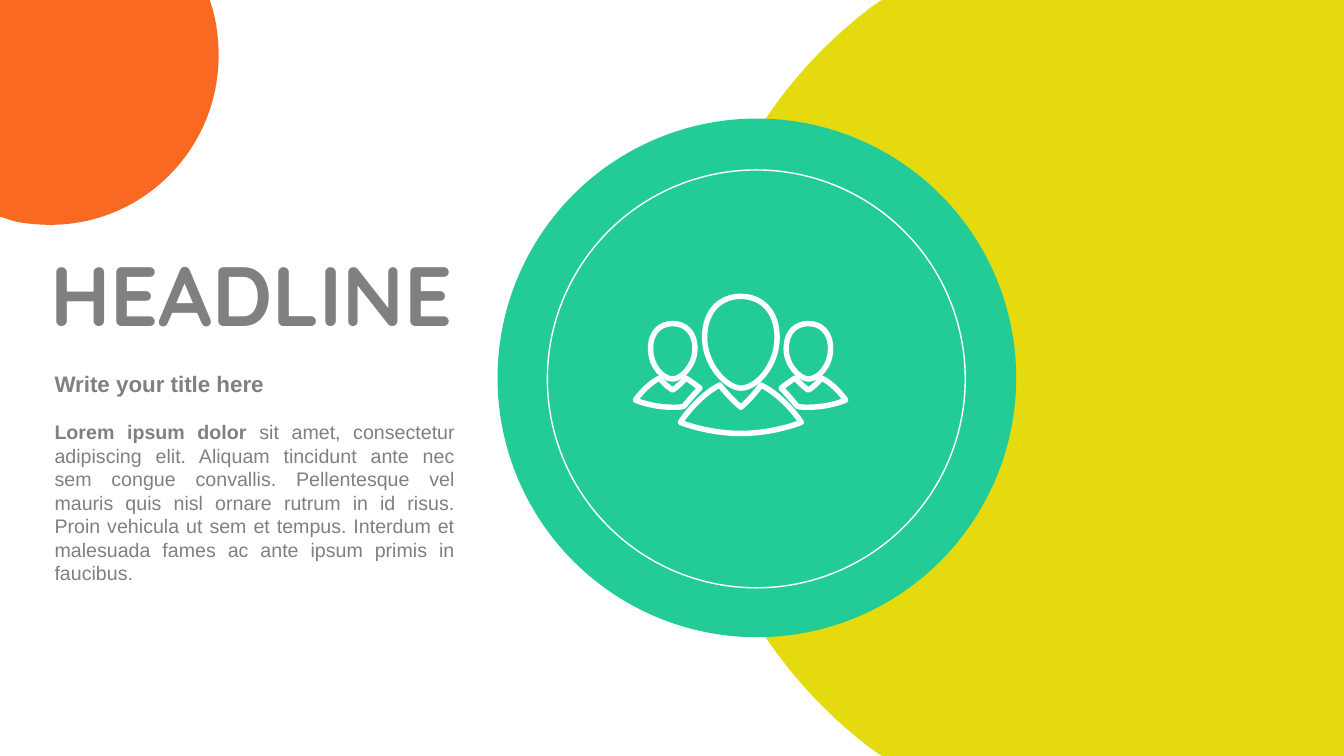
from lxml import etree
from pptx import Presentation
from pptx.dml.color import RGBColor
from pptx.enum.shapes import MSO_SHAPE as SHAPE
from pptx.enum.text import MSO_ANCHOR as ANCHOR, MSO_AUTO_SIZE as AUTO_SIZE, PP_ALIGN as ALIGN
from pptx.oxml.ns import qn
from pptx.util import Pt

COLORS = {"yellow": "E5DA0E", "green": "23CB97", "orange": "FA6921",
          "white": "FFFFFF", "gray": "808080"}
ICON_AXIS = 529  # the side figures mirror each other about this x

# Outlines in points: a pair is a straight step, six numbers are a Bézier step
YELLOW_DISC = [(961.2, 540), (630, 540), (623.5, 535.7),
               (542.9, 475.2, 490.3, 378.7, 490.3, 270),
               (490.3, 161.3, 542.9, 64.8, 623.5, 4.3), (630, 0), (961.2, 0)]
ORANGE_DISC = [(0, 154.8), (0, -12.2), (144.7, -12.2), (146.9, -7.2),
               (153.4, 7.2, 156.2, 23, 156.2, 39.6),
               (156.2, 106.6, 102.2, 160.6, 36, 160.6),
               (27.4, 160.6, 19.4, 159.8, 11.5, 158.4)]
MAIN_FIGURE = [
    [(555.1, 241.2), (555.1, 260.6, 540.7, 277.2, 529.2, 277.2),
     (519.1, 277.2, 503.3, 260.6, 503.3, 241.2),
     (503.3, 221.8, 514.8, 211.7, 529.2, 211.7),
     (543.6, 211.7, 555.1, 221.8, 555.1, 241.2)],
    [(543.6, 275), (537.1, 284.4, 529.2, 290.9, 529.2, 290.9),
     (529.2, 290.9, 521.3, 284.4, 514.1, 275),
     (497.5, 283.7, 486, 301.7, 486, 301.7),
     (486, 301.7, 505.4, 309.6, 529.2, 309.6),
     (553, 309.6, 572.4, 301.7, 572.4, 301.7),
     (572.4, 301.7, 560.9, 283.7, 543.6, 275)],
]
SIDE_FIGURE = [
    [(593.3, 249.1), (593.3, 261.4, 584.6, 270.7, 577.4, 270.7),
     (571.7, 270.7, 561.6, 261.4, 561.6, 249.1),
     (561.6, 236.9, 568.8, 231.1, 577.4, 231.1),
     (586.1, 231.1, 593.3, 236.9, 593.3, 249.1)],
    [(558, 277.2), (560.9, 275, 564.5, 272.2, 568.1, 270),
     (573.1, 275.8, 577.4, 278.6, 577.4, 278.6),
     (577.4, 278.6, 582.5, 275.8, 586.8, 270),
     (596.9, 275, 604.1, 285.8, 604.1, 285.8),
     (604.1, 285.8, 592.6, 290.9, 577.4, 290.9),
     (574.6, 290.9, 571.7, 290.9, 569.5, 290.2),
     (569.5, 290.2, 563, 282.2, 558, 277.2)],
]


def paint(shape, fill=None, line=None, width=1):
    shape.shadow.inherit = False
    for part, color in ((shape.fill, fill), (shape.line.fill, line)):
        if color:
            part.solid()
            part.fore_color.rgb = RGBColor.from_string(COLORS[color])
        else:
            part.background()
    if line:
        shape.line.width = Pt(width)


def add_outline(shapes, steps, mirrored=False):
    points = [step[i:i + 2] for step in steps for i in range(0, len(step), 2)]
    if mirrored:
        points = [(2 * ICON_AXIS - x, y) for x, y in points]
    points = [(Pt(x), Pt(y)) for x, y in points]
    builder = shapes.build_freeform(*points[0])
    builder.add_line_segments(points[1:], close=True)
    shape = builder.convert_to_shape()
    # Join each three control points into one Bézier segment
    segments = iter(list(shape.element.iter(qn("a:lnTo"))))
    for step in steps[1:]:
        segment = next(segments)
        if len(step) == 6:
            curve = etree.Element(qn("a:cubicBezTo"))
            segment.addprevious(curve)
            for part in (segment, next(segments), next(segments)):
                curve.append(part[0])
                part.getparent().remove(part)
    return shape


presentation = Presentation()
presentation.slide_width, presentation.slide_height = Pt(960), Pt(540)
slide = presentation.slides.add_slide(presentation.slide_layouts[5])
shapes = slide.shapes

# Background discs
paint(add_outline(shapes, YELLOW_DISC), fill="yellow")
green_disc = shapes.add_shape(SHAPE.OVAL, Pt(355.4), Pt(84.7), Pt(370.5), Pt(370.5))
paint(green_disc, fill="green")
paint(add_outline(shapes, ORANGE_DISC), fill="orange")

# People icon
icon = shapes.add_group_shape()
for figure, mirrored in ((MAIN_FIGURE, False), (SIDE_FIGURE, False), (SIDE_FIGURE, True)):
    for steps in figure:
        paint(add_outline(icon.shapes, steps, mirrored), line="white", width=3.88)

# Thin ring
ring = shapes.add_shape(SHAPE.OVAL, Pt(391), Pt(121.4), Pt(298.5), Pt(298.5))
paint(ring, line="white")

# Headline and body text
headline = shapes.title
headline.left, headline.top, headline.width, headline.height = Pt(28.8), Pt(169.5), Pt(402.5), Pt(80)
body = shapes.add_textbox(Pt(31.9), Pt(260.6), Pt(300.2), Pt(179.3))
texts = [
    (headline, ALIGN.LEFT, [
        [("HEADLINE", {"size": Pt(60), "name": "Quicksand", "bold": True})]]),
    (body, ALIGN.JUSTIFY, [
        [("Write your title here", {"size": Pt(16), "name": "Arial", "bold": True})],
        [("Lorem ipsum dolor ", {"size": Pt(14), "name": "Arial", "bold": True}),
         ("sit amet, consectetur adipiscing elit. Aliquam tincidunt ante nec sem congue "
          "convallis. Pellentesque vel mauris quis nisl ornare rutrum in id risus. Proin "
          "vehicula ut sem et tempus. Interdum et malesuada fames ac ante ipsum primis in "
          "faucibus.", {"size": Pt(14), "name": "Arial", "bold": False})]]),
]
for shape, alignment, paragraphs in texts:
    frame = shape.text_frame
    frame.word_wrap = True
    frame.auto_size = AUTO_SIZE.NONE
    frame.vertical_anchor = ANCHOR.TOP
    for index, runs in enumerate(paragraphs):
        paragraph = frame.add_paragraph() if index else frame.paragraphs[0]
        paragraph.alignment = alignment
        paragraph.space_before = Pt(16.8 if index else 0)
        for text, font_values in runs:
            run = paragraph.add_run()
            run.text = text
            run.font.color.rgb = RGBColor.from_string(COLORS["gray"])
            for name, value in font_values.items():
                setattr(run.font, name, value)

presentation.save("out.pptx")
